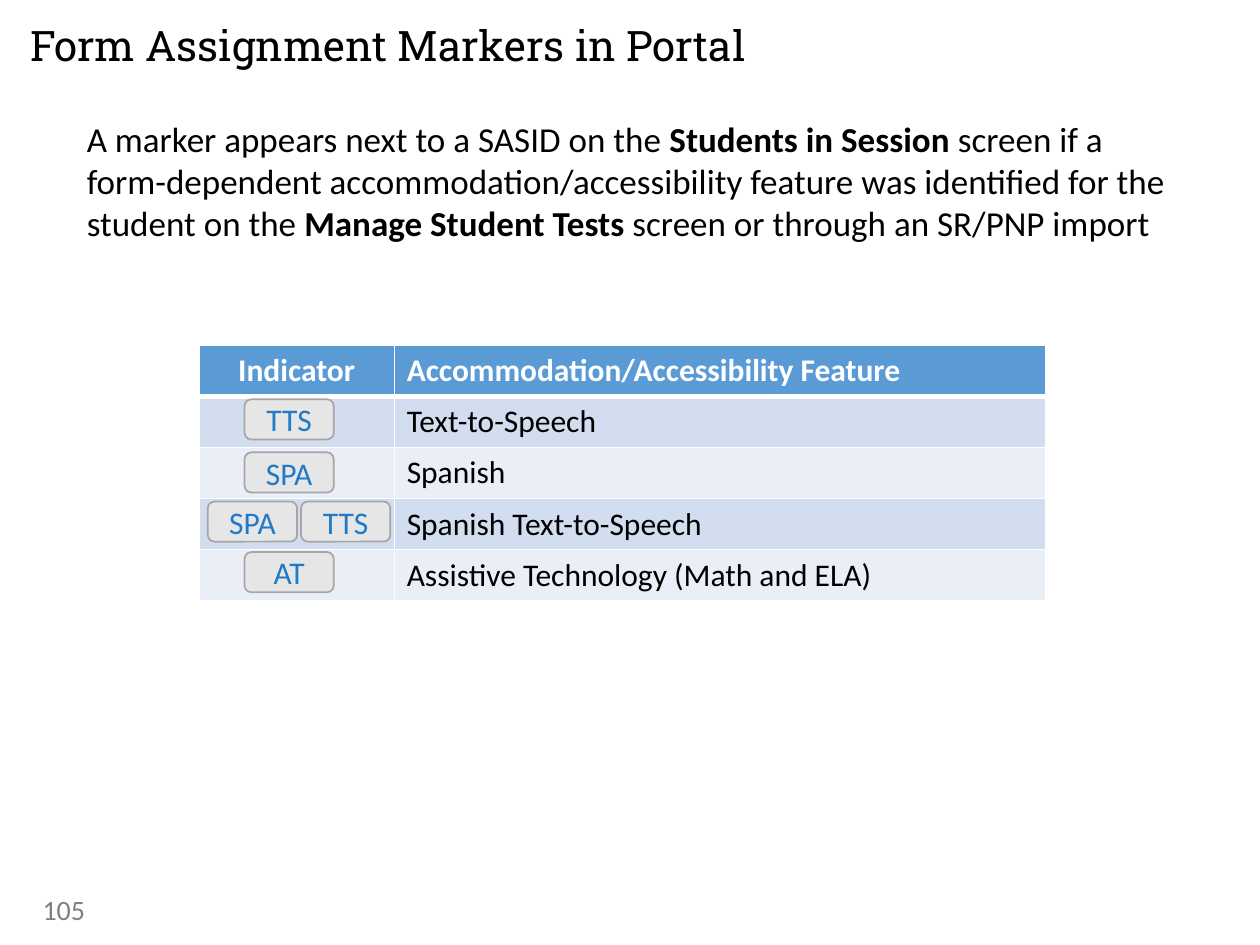
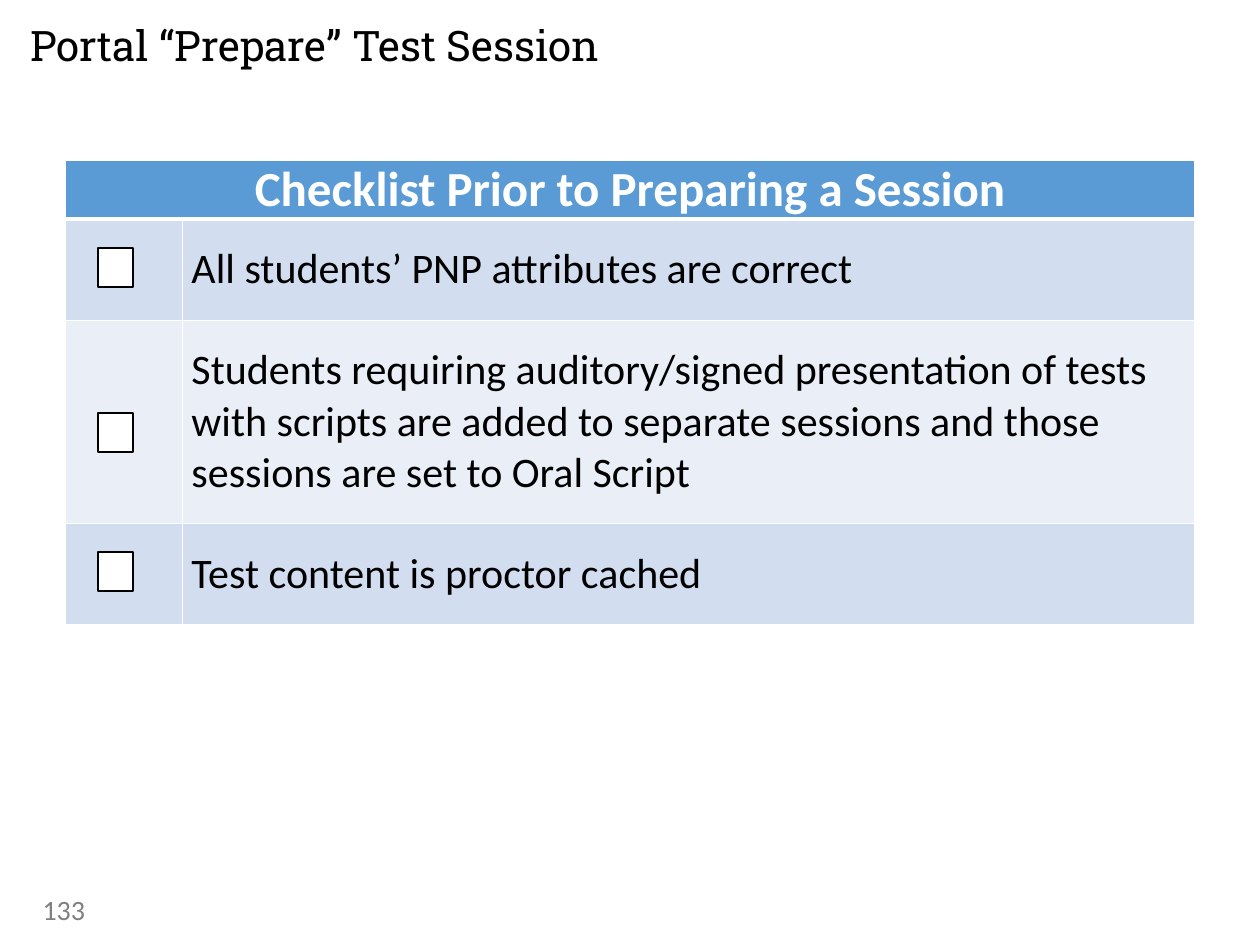
from lxml import etree
from pptx import Presentation
from pptx.dml.color import RGBColor
from pptx.enum.shapes import MSO_SHAPE
from pptx.enum.text import MSO_ANCHOR, MSO_AUTO_SIZE, PP_ALIGN
from pptx.oxml.ns import qn
from pptx.util import Cm, Pt

LEFT, CENTER = PP_ALIGN.LEFT, PP_ALIGN.CENTER
TOP, MIDDLE = MSO_ANCHOR.TOP, MSO_ANCHOR.MIDDLE
NO_FIT = MSO_AUTO_SIZE.NONE
RECT, ROUND = MSO_SHAPE.RECTANGLE, MSO_SHAPE.ROUNDED_RECTANGLE
TITLE_ONLY = 5

# Shared style
BLACK, WHITE, GRAY = "000000", "FFFFFF", "808080"
HEAD, BANDS = "5B9BD5", ("D2DEEF", "EAEFF7")
PILL, EDGE, LABEL = "E6E6E6", "A6A6A6", "207AC6"
BODY_FONT, TITLE_FONT = "Calibri", "Roboto Slab"
GAP, PAD = 0.25, 0.13  # default side and top insets, cm


def color(code):
    return RGBColor.from_string(code)


def place(*sizes):
    return [Cm(size) for size in sizes]


def write(frame, text, size=18, ink=BLACK, font=BODY_FONT, bold=False,
          align=LEFT, spacing=None):
    """Fill a text frame; words between asterisks are bold."""
    para = frame.paragraphs[0]
    para.alignment = align
    if spacing:
        para.line_spacing = spacing
    for i, part in enumerate(text.split("*")):
        if not part:
            continue
        run = para.add_run()
        run.text = part
        run.font.name, run.font.size = font, Pt(size)
        run.font.bold = bold or i % 2 == 1
        run.font.color.rgb = color(ink)


def inset(item, side, top, low=None):
    item.margin_left = item.margin_right = Cm(side)
    item.margin_top = Cm(top)
    item.margin_bottom = Cm(top if low is None else low)


def border(cell, **widths):
    """Draw white cell edges; a:ln* elements must come before the fill."""
    props = cell._tc.get_or_add_tcPr()
    for i, side in enumerate("LRTB"):
        line = etree.Element(qn(f"a:ln{side}"), w=str(Pt(widths.get(side, 1))))
        fill = etree.SubElement(line, qn("a:solidFill"))
        etree.SubElement(fill, qn("a:srgbClr"), val=WHITE)
        props.insert(i, line)


class Deck:
    def __init__(self):
        self.file = Presentation()
        self.file.slide_width, self.file.slide_height = Cm(25.4), Cm(19.05)
        self.slide = None

    def page(self, title, number):
        layout = self.file.slide_layouts[TITLE_ONLY]
        self.slide = self.file.slides.add_slide(layout)
        head = self.slide.shapes.title
        head.left, head.top, head.width, head.height = place(
            0.61, 0.46, 24.16, 1.02)
        frame = head.text_frame
        frame.auto_size, frame.vertical_anchor = NO_FIT, MIDDLE
        inset(frame, 0, 0)
        write(frame, title, size=24, font=TITLE_FONT, spacing=0.9)
        self.text(number, (0.61, 17.86, 5.72, 1.02), size=16, ink=GRAY)

    def text(self, words, box, margins=(GAP, PAD), **style):
        frame = self.slide.shapes.add_textbox(*place(*box)).text_frame
        frame.word_wrap = True
        inset(frame, *margins)
        write(frame, words, **style)

    def shape(self, kind, box, fill, edge, label="", **style):
        item = self.slide.shapes.add_shape(kind, *place(*box))
        item.shadow.inherit = False
        item.fill.solid()
        item.fill.fore_color.rgb = color(fill)
        item.line.color.rgb, item.line.width = color(edge), Pt(1)
        item.text_frame.vertical_anchor = MIDDLE
        write(item.text_frame, label, align=CENTER, **style)

    def pill(self, label, left, top):
        self.shape(ROUND, (left, top, 1.8, 0.81), PILL, EDGE, label, ink=LABEL)

    def check(self, top):
        self.shape(RECT, (1.98, top, 0.71, 0.79), WHITE, BLACK)

    def table(self, left, top, cols, rows, head, items, size=18, top_size=18,
              anchor=TOP, top_pad=(GAP, PAD), pad=(GAP, PAD)):
        """Two columns: a marker column left free, and one text per row."""
        grid = self.slide.shapes.add_table(
            len(rows), len(cols),
            *place(left, top, sum(cols), sum(rows))).table
        for col, width in zip(grid.columns, cols):
            col.width = Cm(width)
        for row, height in zip(grid.rows, rows):
            row.height = Cm(height)
        if len(head) == 1:
            grid.cell(0, 0).merge(grid.cell(0, 1))
        texts = [head] + [("", item) for item in items]
        for r, line in enumerate(texts):
            for c in range(len(cols)):
                cell = grid.cell(r, c)
                cell.fill.solid()
                cell.fill.fore_color.rgb = color(
                    BANDS[(r - 1) % 2] if r else HEAD)
                border(cell, T=3 if r == 1 else 1, B=1 if r else 3)
                cell.vertical_anchor = anchor
                inset(cell, *(pad if r else top_pad))
                if c < len(line):
                    write(cell.text_frame, line[c],
                          size=size if r else top_size,
                          ink=BLACK if r else WHITE, bold=r == 0,
                          align=LEFT if r or c else CENTER)


def markers(deck):
    deck.page("Form Assignment Markers in Portal", "105")
    deck.text("A marker appears next to a SASID on the *Students in Session "
              "*screen if a form-dependent accommodation/accessibility "
              "feature was identified for the student on the *Manage Student "
              "Tests *screen or through an SR/PNP import",
              (1.75, 2.36, 21.89, 2.69), margins=(0, 0, PAD), size=20)
    deck.table(4.01, 6.96, (3.94, 13.13), [1.03] * 5,
               ("Indicator", "Accommodation/Accessibility Feature"),
               ("Text-to-Speech", "Spanish", "Spanish Text-to-Speech",
                "Assistive Technology (Math and ELA)"))
    # Markers over the first column
    for label, left, top in (("TTS", 4.93, 8.05), ("SPA", 4.93, 9.12),
                             ("TTS", 6.07, 10.11), ("AT", 4.93, 11.13),
                             ("SPA", 4.19, 10.11)):
        deck.pill(label, left, top)


def checklist(deck):
    deck.page("Portal “Prepare” Test Session", "133")
    deck.table(1.32, 3.23, (2.36, 20.4), (1.18, 2.04, 4.1, 2.04),
               ("Checklist Prior to Preparing a Session",),
               ("All students’ PNP attributes are correct",
                "Students requiring auditory/signed presentation of tests "
                "with scripts are added to separate sessions and those "
                "sessions are set to Oral Script",
                "Test content is proctor cached"),
               size=24, top_size=28, anchor=MIDDLE,
               top_pad=(0.18, 0), pad=(0.18, 0.5))
    # Check boxes
    for top in (5, 8.33, 11.13):
        deck.check(top)


def main():
    deck = Deck()
    markers(deck)
    checklist(deck)
    deck.file.save("out.pptx")


if __name__ == "__main__":
    main()
